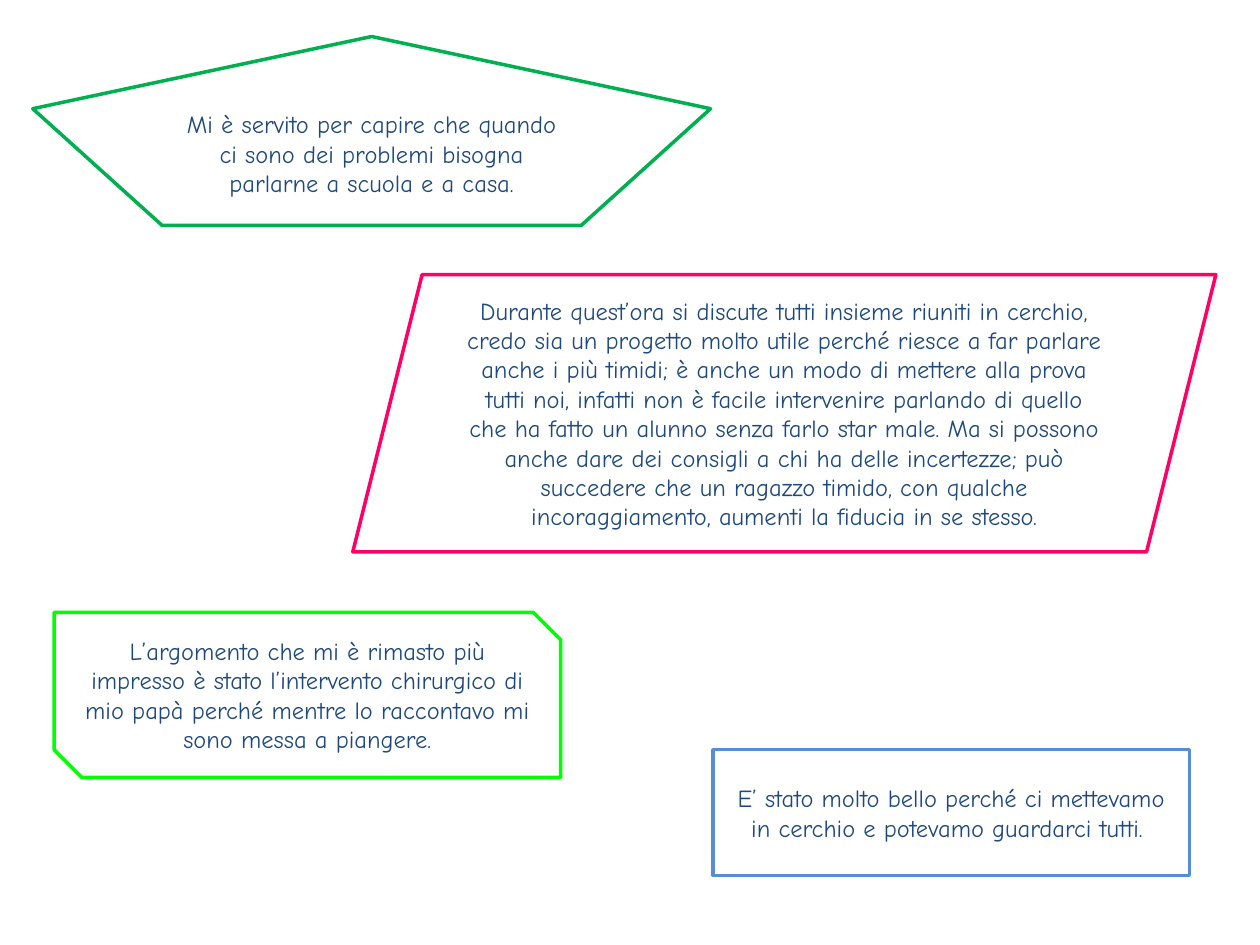
from dataclasses import dataclass

from pptx import Presentation
from pptx.dml.color import RGBColor
from pptx.enum.shapes import MSO_SHAPE as Shape
from pptx.enum.text import MSO_ANCHOR as Anchor, PP_ALIGN as Align
from pptx.slide import Slide
from pptx.util import Inches, Pt

COLUMNS, ROWS = 100, 75
SLIDE_WIDTH, SLIDE_HEIGHT = Inches(10), Inches(7.5)


@dataclass(frozen=True)
class Theme:
    font: str = "Comic Neue"
    text_size: int = 14
    outline_width: int = 2
    text: str = "1F497D"
    paper: str = "FFFFFF"
    green: str = "00B050"
    pink: str = "FF0066"
    blue: str = "558ED5"
    lime: str = "00FF00"


@dataclass(frozen=True)
class Comment:
    """A pupil's comment; position and size are in grid columns and rows."""
    outline: Shape
    color: str
    column: float
    row: float
    columns: float
    rows: float
    words: str


THEME = Theme()

COMMENTS = [
    Comment(Shape.REGULAR_PENTAGON, THEME.green, 2.6, 2.9, 53.8, 15,
            "Mi è servito per capire che quando ci sono dei problemi bisogna "
            "parlarne a scuola e a casa."),
    Comment(Shape.PARALLELOGRAM, THEME.pink, 28, 21.8, 68.5, 22,
            "Durante quest’ora si discute tutti insieme riuniti in cerchio, "
            "credo sia un progetto molto utile perché riesce a far parlare "
            "anche i più timidi; è anche un modo di mettere alla prova tutti "
            "noi, infatti non è facile intervenire parlando di quello che ha "
            "fatto un alunno senza farlo star male. Ma si possono anche dare "
            "dei consigli a chi ha delle incertezze; può succedere che un "
            "ragazzo timido, con qualche incoraggiamento, aumenti la fiducia "
            "in se stesso."),
    Comment(Shape.RECTANGLE, THEME.blue, 56.6, 59.5, 37.8, 10,
            "E’ stato molto bello perché ci mettevamo in cerchio e potevamo "
            "guardarci tutti. "),
    Comment(Shape.SNIP_2_DIAG_RECTANGLE, THEME.lime, 4.3, 48.6, 40.2, 13.1,
            "L’argomento che mi è rimasto più impresso è stato l’intervento "
            "chirurgico di mio papà perché mentre lo raccontavo mi sono messa "
            "a piangere."),
]


def across(columns: float) -> int:
    return round(SLIDE_WIDTH * columns / COLUMNS)


def down(rows: float) -> int:
    return round(SLIDE_HEIGHT * rows / ROWS)


def draw_comment(slide: Slide, comment: Comment) -> None:
    balloon = slide.shapes.add_shape(
        comment.outline, across(comment.column), down(comment.row),
        across(comment.columns), down(comment.rows))
    balloon.shadow.inherit = False
    balloon.fill.solid()
    balloon.fill.fore_color.rgb = RGBColor.from_string(THEME.paper)
    balloon.line.color.rgb = RGBColor.from_string(comment.color)
    balloon.line.width = Pt(THEME.outline_width)

    frame = balloon.text_frame
    frame.word_wrap = True
    frame.vertical_anchor = Anchor.MIDDLE
    paragraph = frame.paragraphs[0]
    paragraph.text = comment.words
    paragraph.alignment = Align.CENTER
    paragraph.font.name = THEME.font
    paragraph.font.size = Pt(THEME.text_size)
    paragraph.font.color.rgb = RGBColor.from_string(THEME.text)


def main() -> None:
    deck = Presentation()
    deck.slide_width, deck.slide_height = SLIDE_WIDTH, SLIDE_HEIGHT
    slide = deck.slides.add_slide(deck.slide_layouts[6])
    for comment in COMMENTS:
        draw_comment(slide, comment)
    deck.save("out.pptx")


if __name__ == "__main__":
    main()
